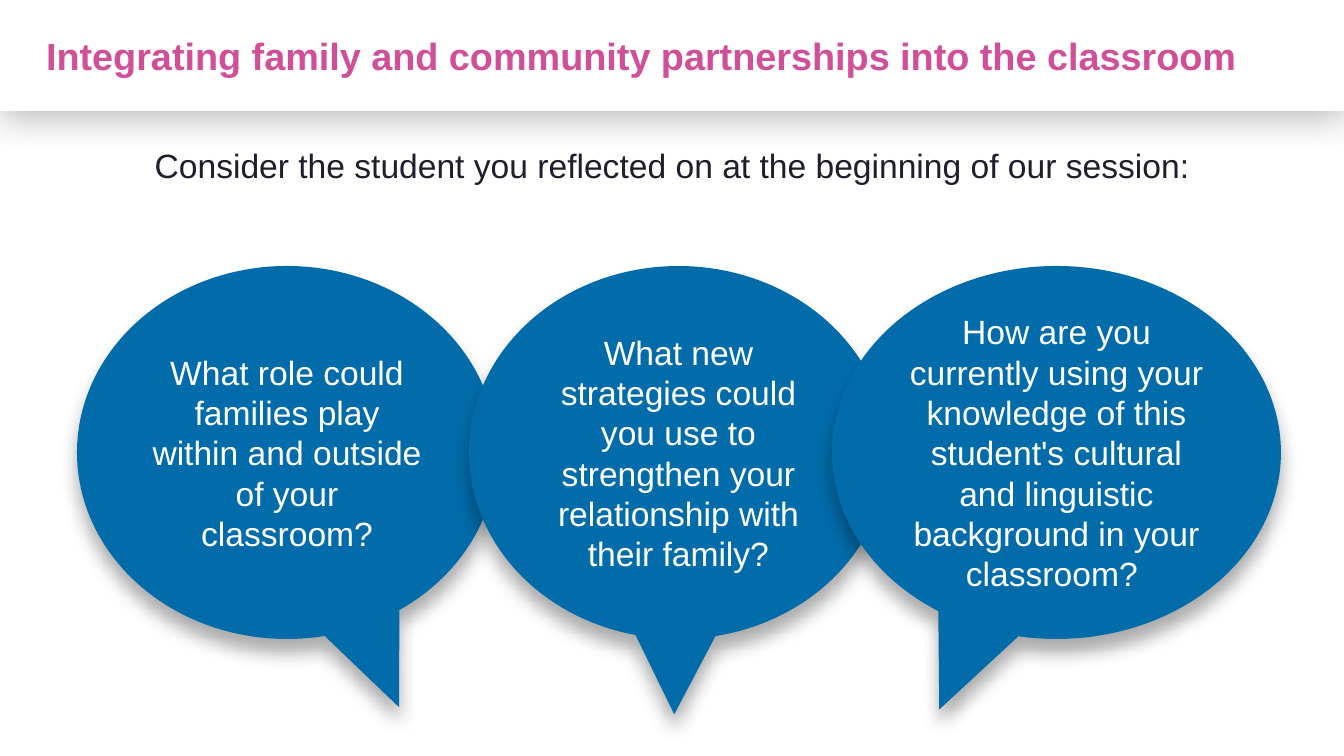
from dataclasses import dataclass

import pptx
import pptx.dml.color
import pptx.enum.shapes
import pptx.enum.text
import pptx.oxml
import pptx.oxml.ns
import pptx.util

EMU_PER_PX = 914400 / 100.8
FONT = "Arial"
COLORS = {
    "white": "FFFFFF",
    "pink": "D14F97",
    "ink": "1E1E2D",
    "blue": "026CAA",
    "shadow": "000000",
}
ALIGN = pptx.enum.text.PP_ALIGN
ANCHOR = pptx.enum.text.MSO_ANCHOR
SHAPE = pptx.enum.shapes.MSO_SHAPE


@dataclass(frozen=True)
class Shadow:
    alpha: int
    blur: int
    distance: int


@dataclass(frozen=True)
class Question:
    text: str
    left: int
    width: int
    tip_x: float
    tip_y: float


BAND_SHADOW = Shadow(30, 28, 3)
BUBBLE_SHADOW = Shadow(32, 13, 10)
BUBBLE_TOP, BUBBLE_HEIGHT = 266, 373
QUESTIONS = [
    Question("What role could families play within and outside of your classroom?",
             77, 420, 0.267, 0.683),
    Question("What new strategies could you use to strengthen your relationship "
             "with their family?", 469, 419, -0.01, 0.702),
    Question("How are you currently using your knowledge of this student's cultural "
             "and linguistic background in your classroom? ",
             832, 449, -0.261, 0.689),
]


def px(length: int) -> int:
    return round(length * EMU_PER_PX)


def rgb(name: str) -> pptx.dml.color.RGBColor:
    return pptx.dml.color.RGBColor.from_string(COLORS[name])


def write(shape, text: str, *, color: str, size: int = 24, bold: bool = False,
          align=ALIGN.CENTER, anchor=ANCHOR.MIDDLE, spacing: float = 1.0) -> None:
    frame = shape.text_frame
    frame.word_wrap = True
    frame.auto_size = pptx.enum.text.MSO_AUTO_SIZE.NONE
    frame.vertical_anchor = anchor
    frame.margin_left = frame.margin_right = pptx.util.Inches(0.1)
    frame.margin_top = frame.margin_bottom = pptx.util.Inches(0.05)
    paragraph = frame.paragraphs[0]
    paragraph.alignment = align
    paragraph.line_spacing = spacing
    run = paragraph.add_run()
    run.text = text
    run.font.name = FONT
    run.font.size = pptx.util.Pt(size)
    run.font.bold = bold
    run.font.color.rgb = rgb(color)


def add_shadowed(slide, kind, left: int, top: int, width: int, height: int,
                 fill: str, shadow: Shadow):
    shape = slide.shapes.add_shape(kind, px(left), px(top), px(width), px(height))
    shape.fill.solid()
    shape.fill.fore_color.rgb = rgb(fill)
    shape.line.fill.background()
    shape.shadow.inherit = False
    effects = shape.element.spPr.find(pptx.oxml.ns.qn("a:effectLst"))
    effects.append(pptx.oxml.parse_xml(
        f'<a:outerShdw {pptx.oxml.ns.nsdecls("a")} '
        f'blurRad="{pptx.util.Pt(shadow.blur)}" dist="{pptx.util.Pt(shadow.distance)}" '
        f'dir="5400000" algn="t" rotWithShape="0"><a:srgbClr val="{COLORS["shadow"]}">'
        f'<a:alpha val="{shadow.alpha * 1000}"/></a:srgbClr></a:outerShdw>'))
    return shape


def add_question(slide, question: Question) -> None:
    bubble = add_shadowed(slide, SHAPE.OVAL_CALLOUT, question.left, BUBBLE_TOP,
                          question.width, BUBBLE_HEIGHT, "blue", BUBBLE_SHADOW)
    bubble.adjustments[0] = question.tip_x
    bubble.adjustments[1] = question.tip_y
    write(bubble, question.text, color="white")


def main() -> None:
    deck = pptx.Presentation()
    deck.slide_width, deck.slide_height = px(1344), px(756)
    slide = deck.slides.add_slide(deck.slide_layouts.get_by_name("Title Only"))

    title = slide.shapes.title
    title.left, title.top, title.width, title.height = px(36), px(27), px(1253), px(57)
    write(title, "Integrating family and community partnerships into the classroom",
          color="pink", size=27, bold=True, align=ALIGN.LEFT)

    band = add_shadowed(slide, SHAPE.RECTANGLE, 0, 0, 1344, 111, "white", BAND_SHADOW)
    title.element.addprevious(band.element)

    prompt = slide.shapes.add_textbox(px(44), px(134), px(1256), px(235))
    write(prompt, "Consider the student you reflected on at the beginning of our session:",
          color="ink", anchor=ANCHOR.TOP, spacing=1.14)

    for question in QUESTIONS:
        add_question(slide, question)

    deck.save("out.pptx")


if __name__ == "__main__":
    main()
